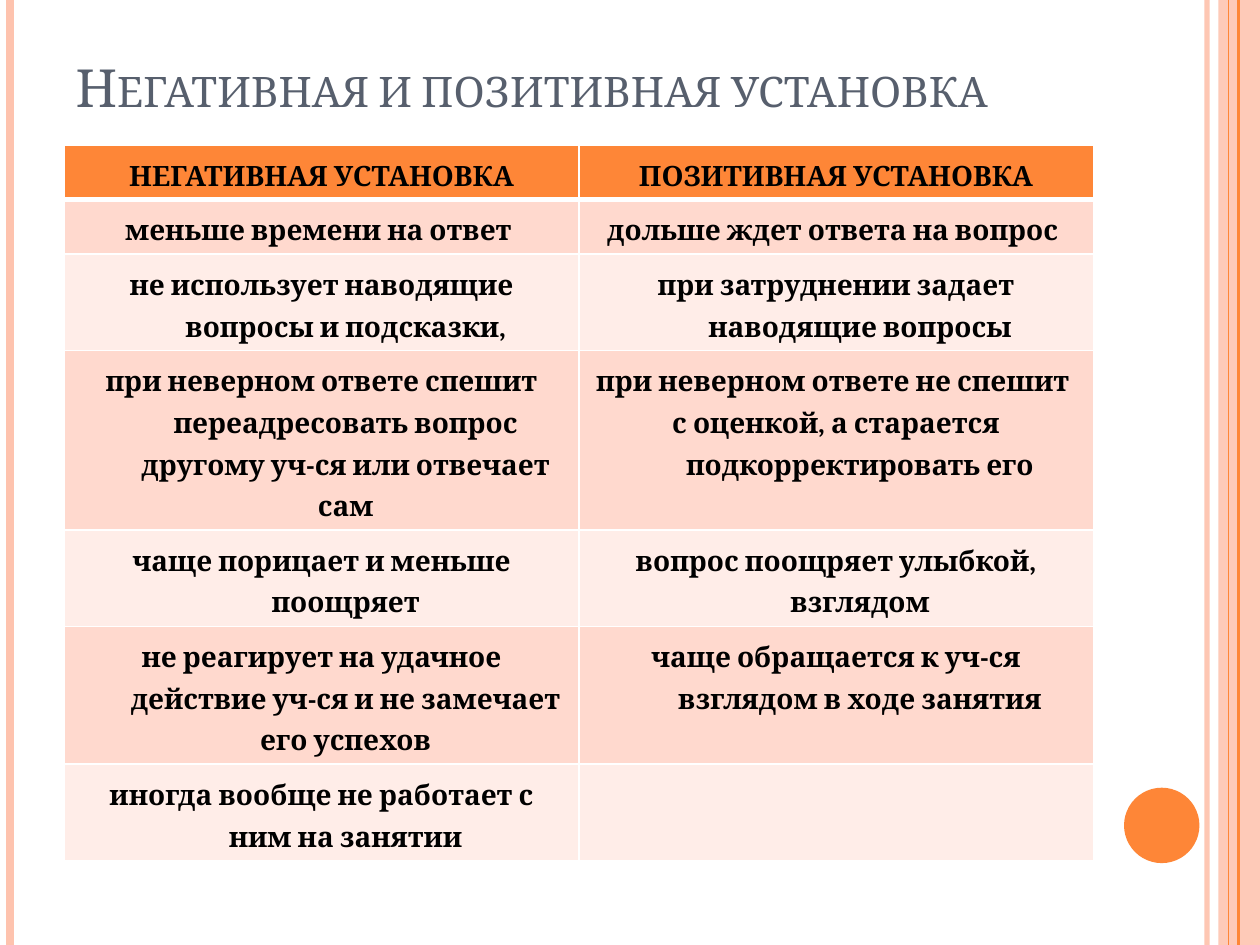
from typing import NamedTuple, Optional

from lxml.etree import SubElement
from pptx import Presentation
from pptx.dml.color import RGBColor
from pptx.enum.shapes import MSO_CONNECTOR as Connector, MSO_SHAPE as Shape
from pptx.enum.text import MSO_ANCHOR as Anchor, PP_ALIGN as Align
from pptx.oxml.ns import qn
from pptx.util import Cm, Pt

FONT = "Cambria"
ORANGE, PEACH, WHITE, BLACK, SLATE = "FE8637", "FEC3AE", "FFFFFF", "000000", "575F6D"
BANDS = ("FFD9CE", "FFEDE8")
WIDTH, HEIGHT = 25.4, 19.05


class Stripe(NamedTuple):
    """A full-height vertical line; x in centimetres, width in points."""
    x: float
    color: str
    width: float
    opacity: Optional[int] = None


class Attitude(NamedTuple):
    """One table row; a line feed starts a new paragraph."""
    negative: str
    positive: str


LEFT_STRIPES = (Stripe(24.33, PEACH, 3, 93), Stripe(0.2, PEACH, 4.5))
RIGHT_STRIPES = (Stripe(24.97, ORANGE, 1.5), Stripe(24.77, ORANGE, 0.75))

ROWS = (
    Attitude("НЕГАТИВНАЯ УСТАНОВКА", "ПОЗИТИВНАЯ УСТАНОВКА"),
    Attitude("меньше времени на ответ ", "дольше ждет ответа на вопрос "),
    Attitude("не использует наводящие вопросы и подсказки,",
             "при затруднении задает наводящие вопросы"),
    Attitude("при неверном ответе спешит переадресовать вопрос другому уч-ся или отвечает сам",
             "при неверном ответе не спешит \nс оценкой, а старается подкорректировать его"),
    Attitude("чаще порицает и меньше поощряет", "вопрос поощряет улыбкой, взглядом"),
    Attitude("не реагирует на удачное действие уч-ся и не замечает его успехов",
             "чаще обращается к уч-ся взглядом в ходе занятия"),
    Attitude("иногда вообще не работает с ним на занятии", ""),
)


def rgb(color: str) -> RGBColor:
    return RGBColor.from_string(color)


def set_opacity(element, percent: int) -> None:
    color = next(element.iter(qn("a:srgbClr")))
    SubElement(color, qn("a:alpha"), val=str(percent * 1000))


def write(frame, text: str, *, size: float, color: str, bold: bool = False,
          small_caps: bool = False, align=Align.LEFT, hanging: float = 0,
          spacing: Optional[float] = None) -> None:
    frame.text = text
    for paragraph in frame.paragraphs:
        paragraph.alignment = align
        paragraph.line_spacing = spacing
        if hanging:
            properties = paragraph._p.get_or_add_pPr()
            properties.set("marL", str(Cm(hanging)))
            properties.set("indent", str(-Cm(hanging)))
        paragraph.font.size = Pt(size)
        for run in paragraph.runs:
            font = run.font
            font.name, font.size, font.bold = FONT, Pt(size), bold
            font.color.rgb = rgb(color)
            if small_caps:
                run._r.get_or_add_rPr().set("cap", "small")


def add_stripe(slide, stripe: Stripe) -> None:
    line = slide.shapes.add_connector(
        Connector.STRAIGHT, Cm(stripe.x), 0, Cm(stripe.x), Cm(HEIGHT))
    line.line.color.rgb = rgb(stripe.color)
    line.line.width = Pt(stripe.width)
    properties = line._element.spPr
    if stripe.opacity:
        set_opacity(properties, stripe.opacity)
    SubElement(properties, qn("a:effectLst"))


def add_plain_shape(slide, kind, left: float, top: float, width: float,
                    height: float, color: str, opacity: Optional[int] = None) -> None:
    shape = slide.shapes.add_shape(kind, Cm(left), Cm(top), Cm(width), Cm(height))
    shape.shadow.inherit = False
    shape.fill.solid()
    shape.fill.fore_color.rgb = rgb(color)
    shape.line.fill.background()
    if opacity:
        set_opacity(shape._element.spPr, opacity)


def set_borders(cell, **widths: float) -> None:
    """Draw white borders; keywords are the sides L, R, T and B in points."""
    properties = cell._tc.get_or_add_tcPr()
    for side, width in widths.items():
        line = SubElement(properties, qn(f"a:ln{side}"), w=str(Pt(width)))
        SubElement(SubElement(line, qn("a:solidFill")), qn("a:srgbClr"), val=WHITE)


def add_attitude_table(slide) -> None:
    row_height = 1.03
    frame = slide.shapes.add_table(len(ROWS), 2, Cm(1.3), Cm(2.93),
                                   Cm(20.74), Cm(row_height * len(ROWS)))
    table = frame.table
    table.horz_banding = False
    for row, attitude in enumerate(ROWS):
        for column, text in enumerate(attitude):
            cell = table.cell(row, column)
            set_borders(cell, L=1, R=1, T=3 if row == 1 else 1, B=3 if row == 0 else 1)
            cell.fill.solid()
            cell.fill.fore_color.rgb = rgb(BANDS[(row - 1) % 2] if row else ORANGE)
            write(cell.text_frame, text, size=16, color=BLACK, bold=True,
                  align=Align.CENTER, hanging=0.97, spacing=1.3)


def add_title(slide, text: str) -> None:
    title = slide.shapes.title
    title.left, title.top, title.width, title.height = Cm(1.27), Cm(0.76), Cm(20.75), Cm(1.75)
    title.text_frame.vertical_anchor = Anchor.BOTTOM
    write(title.text_frame, text, size=30, color=SLATE, small_caps=True)


def main() -> None:
    presentation = Presentation()
    presentation.slide_width, presentation.slide_height = Cm(WIDTH), Cm(HEIGHT)
    slide = presentation.slides.add_slide(presentation.slide_layouts[5])
    for stripe in LEFT_STRIPES:
        add_stripe(slide, stripe)
    add_plain_shape(slide, Shape.RECTANGLE, 24.56, 0, 0.84, HEIGHT, PEACH, opacity=87)
    for stripe in RIGHT_STRIPES:
        add_stripe(slide, stripe)
    add_plain_shape(slide, Shape.OVAL, 22.66, 15.88, 1.52, 1.52, ORANGE)
    add_title(slide, "Негативная и позитивная установка")
    add_attitude_table(slide)
    presentation.save("out.pptx")


if __name__ == "__main__":
    main()
